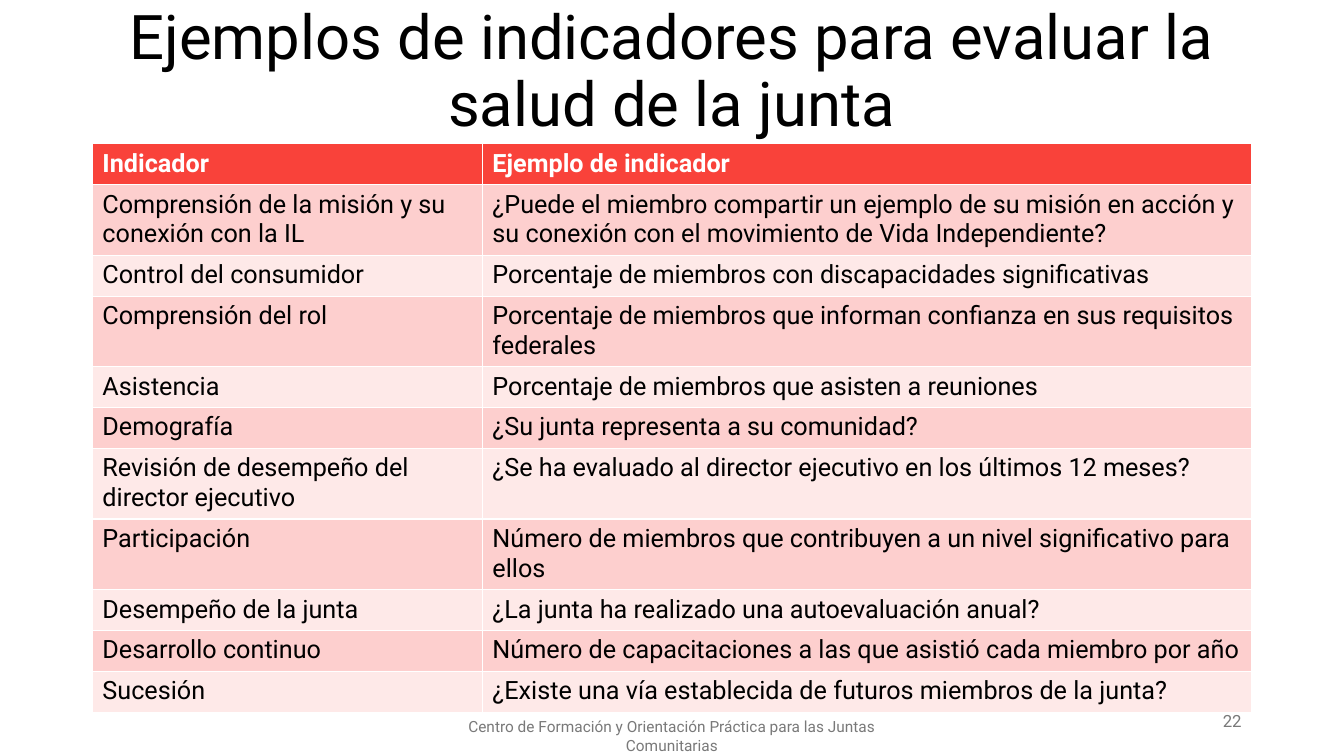
from pptx import Presentation
from pptx.dml.color import RGBColor as RGB
from pptx.enum.text import MSO_ANCHOR as Anchor, PP_ALIGN as Align
from pptx.util import Pt


def style(para, size, color, bold=False):
    font = para.font
    font.name, font.size, font.bold = "Roboto", Pt(size), bold
    font.color.rgb = RGB.from_string(color)


def label(text, box, size, color, align):
    """Add a wrapped, vertically centred text box and return its paragraph."""
    frame = slide.shapes.add_textbox(*map(Pt, box)).text_frame
    frame.word_wrap = True
    frame.vertical_anchor = Anchor.MIDDLE
    para = frame.paragraphs[0]
    para.text, para.alignment = text, align
    style(para, size, color)
    return para


HEAD, DARK, LIGHT = "F9423A", "FDCFCE", "FEE9E8"
BLACK, WHITE, GREY = "000000", "FFFFFF", "797979"

rows = [
    ("Indicador", "Ejemplo de indicador"),
    ("Comprensión de la misión y su conexión con la IL",
     "¿Puede el miembro compartir un ejemplo de su misión en acción y "
     "su conexión con el movimiento de Vida Independiente?"),
    ("Control del consumidor",
     "Porcentaje de miembros con discapacidades significativas"),
    ("Comprensión del rol",
     "Porcentaje de miembros que informan confianza en sus requisitos federales"),
    ("Asistencia", "Porcentaje de miembros que asisten a reuniones"),
    ("Demografía", "¿Su junta representa a su comunidad?"),
    ("Revisión de desempeño del director ejecutivo",
     "¿Se ha evaluado al director ejecutivo en los últimos 12 meses?"),
    ("Participación",
     "Número de miembros que contribuyen a un nivel significativo para ellos"),
    ("Desempeño de la junta", "¿La junta ha realizado una autoevaluación anual?"),
    ("Desarrollo continuo",
     "Número de capacitaciones a las que asistió cada miembro por año"),
    ("Sucesión", "¿Existe una vía establecida de futuros miembros de la junta?"),
]

deck = Presentation()
deck.slide_width, deck.slide_height = Pt(960), Pt(540)
slide = deck.slides.add_slide(deck.slide_layouts[6])

title = label("Ejemplos de indicadores para evaluar la salud de la junta",
              (66, 0, 828, 104.4), 44, BLACK, Align.CENTER)
title.line_spacing = 0.9

# The default table style supplies the white cell borders.
height = 29.2
grid = slide.shapes.add_table(len(rows), 2, Pt(66), Pt(102.7), Pt(828),
                              Pt(height * len(rows)))
table = grid.table
for col, width in zip(table.columns, (278.6, 549.4)):
    col.width = Pt(width)
for i, texts in enumerate(rows):
    table.rows[i].height = Pt(height)
    fill = HEAD if i == 0 else DARK if i % 2 else LIGHT
    for cell, text in zip(table.rows[i].cells, texts):
        cell.text = text
        cell.fill.solid()
        cell.fill.fore_color.rgb = RGB.from_string(fill)
        style(cell.text_frame.paragraphs[0], 18,
              BLACK if i else WHITE, bold=i == 0)
grid.height = Pt(406)

label("Centro de Formación y Orientación Práctica para las Juntas Comunitarias",
      (318, 511.2, 324, 28.8), 11, GREY, Align.CENTER)
label("22", (678, 500.4, 216, 28.8), 12, GREY, Align.RIGHT)

deck.save("out.pptx")
